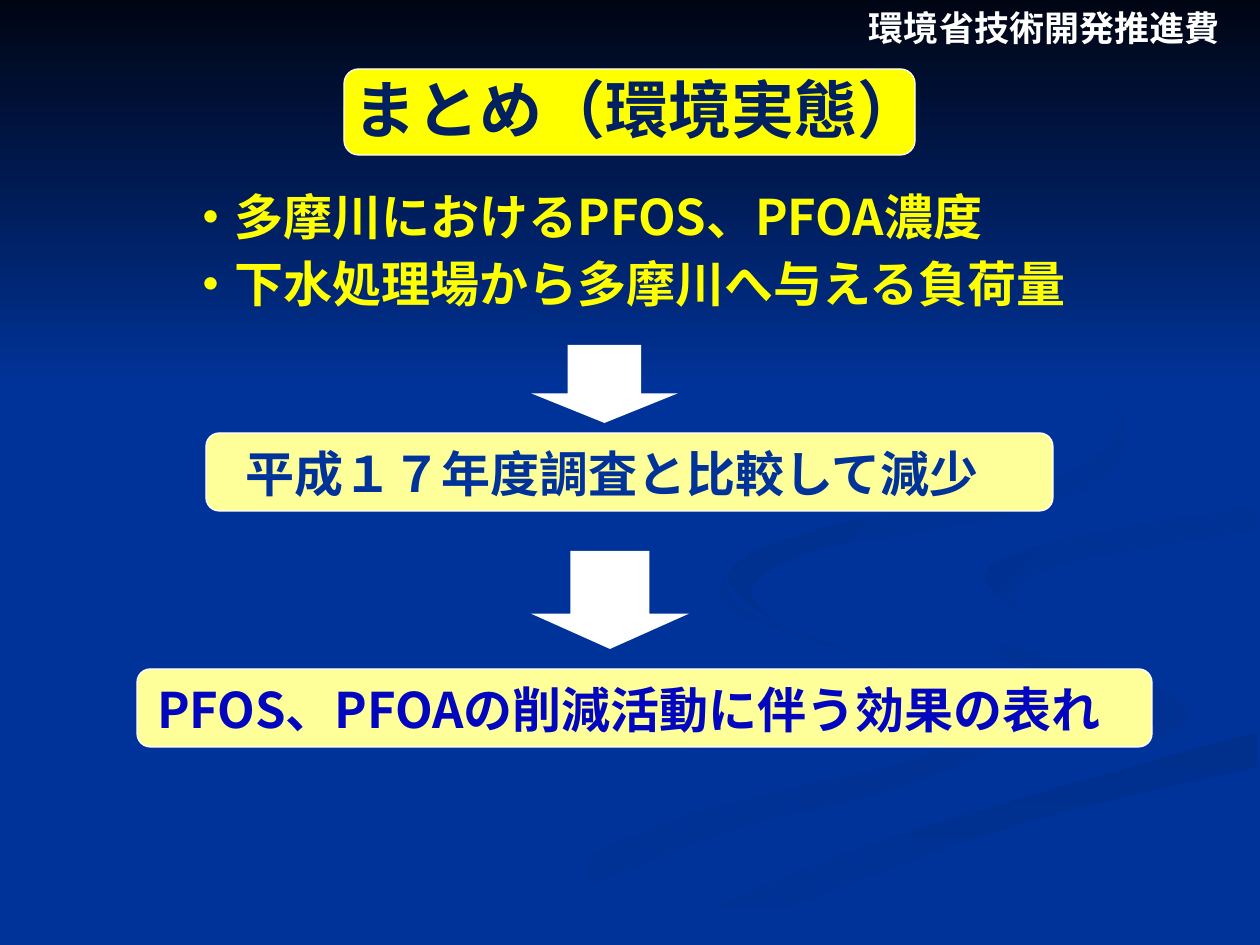
from pptx import Presentation
from pptx.dml.color import RGBColor
from pptx.enum.shapes import MSO_SHAPE
from pptx.enum.text import MSO_ANCHOR, MSO_AUTO_SIZE, PP_ALIGN
from pptx.oxml.ns import qn
from pptx.util import Pt
from lxml.etree import SubElement

PX = 7257.14  # EMU per px, at 126 px to the inch
THEME = {
    "font": "Noto Sans CJK JP",
    "background": "003399", "band_top": "000514",
    "ribbon_light": "003193", "ribbon_mid": "003091", "ribbon_dark": "002F8C",
    "white": "FFFFFF", "yellow": "FFFF00", "cream": "FFFF99",
    "title": "002060", "finding": "003399", "effect": "0206BE",
    "title_size": 36, "body_size": 28, "header_size": 20,
}


def place(shape, left, top, width, height):
    shape.left, shape.top, shape.width, shape.height = (
        round(value * PX) for value in (left, top, width, height))


def write(shape, text, size, color, anchor=MSO_ANCHOR.TOP, inset=0, wrap=True):
    frame = shape.text_frame
    frame.text = text
    frame.word_wrap = wrap
    frame.auto_size = MSO_AUTO_SIZE.NONE
    frame.vertical_anchor = anchor
    frame.margin_left = frame.margin_right = round(inset * PX)
    frame.margin_top = frame.margin_bottom = round(inset / 2 * PX)
    for paragraph in frame.paragraphs:
        paragraph.alignment = PP_ALIGN.LEFT
        paragraph.line_spacing = 1.0
        paragraph.space_before = Pt(0)
        font = paragraph.runs[0].font
        font.name, font.size, font.bold = THEME["font"], Pt(THEME[size]), True
        font.color.rgb = RGBColor.from_string(THEME[color])
        SubElement(font._element, qn("a:ea"), typeface=THEME["font"])


presentation = Presentation()
presentation.slide_width, presentation.slide_height = round(1260 * PX), round(945 * PX)
slide = presentation.slides.add_slide(presentation.slide_layouts[1])
slide.background.fill.solid()
slide.background.fill.fore_color.rgb = RGBColor.from_string(THEME["background"])

# Background ribbons and top band: start colour, end colour, angle, edges
low_edge = [(634, 944), (794, 873), (963, 815), (1257, 732)]
backdrop = [
    ("background", "ribbon_light", 0, [
        [(724, 578), (748, 611), (859, 654), (984, 697),
         (1007, 735), (908, 785), (711, 838), (455, 944)],
        [(378, 944), (679, 818), (916, 759), (988, 715),
         (960, 689), (856, 654), (740, 615), (718, 592)]]),
    ("background", "ribbon_light", 45, [
        [(912, 585), (939, 617), (1022, 649), (1140, 680), (1188, 718), (1126, 762)],
        [(1126, 762), (1157, 732), (1109, 692), (1004, 660), (924, 615), (912, 585)]]),
    ("ribbon_dark", "background", 90, [
        low_edge, [(1257, 767), (1034, 820), (818, 895), (719, 944)]]),
    ("background", "background", 0, [
        [(601, 944), (780, 862), (983, 799), (1188, 725), (1140, 680),
         (1023, 649), (914, 585), (1018, 526), (1259, 488)],
        [(1259, 507), (1052, 542), (984, 580), (1048, 627), (1259, 678)],
        low_edge[::-1]]),
    ("ribbon_mid", "background", 45, [
        [(1257, 507), (1131, 527), (1021, 551), (984, 580), (1041, 625)],
        [(1041, 625), (1014, 595), (1062, 564), (1257, 529)]]),
    ("ribbon_dark", "background", 45, [
        [(960, 294), (1062, 347), (1126, 433), (1077, 493),
         (931, 530), (818, 549), (751, 588), (784, 630)],
        [(784, 630), (728, 575), (818, 529), (1046, 481),
         (1120, 422), (1066, 352), (960, 294)]]),
    ("band_top", "background", 90, [[(0, 0), (0, 388)], [(1260, 388), (1260, 0)]]),
]
STEPS = 6
for start, end, angle, edges in backdrop:
    # Each edge is a Catmull-Rom curve through its points
    outline = []
    for edge in edges:
        padded = [edge[0], *edge, edge[-1]]
        for a, b, c, d in zip(padded, padded[1:], padded[2:], padded[3:]):
            for step in range(STEPS):
                t = step / STEPS
                outline.append(tuple(
                    q + t * (r - p) / 2 + t**2 * (2 * p - 5 * q + 4 * r - s) / 2
                    + t**3 * (3 * q - p - 3 * r + s) / 2
                    for p, q, r, s in zip(a, b, c, d)))
        outline.append(edge[-1])
    builder = slide.shapes.build_freeform(*outline[0], scale=PX)
    builder.add_line_segments(outline[1:], close=True)
    shape = builder.convert_to_shape()
    shape.shadow.inherit = False
    shape.line.fill.background()
    if start == end:
        shape.fill.solid()
        shape.fill.fore_color.rgb = RGBColor.from_string(THEME[start])
    else:
        shape.fill.gradient()
        shape.fill.gradient_angle = (360 - angle) % 360
        for stop, color in zip(shape.fill.gradient_stops, (start, end)):
            stop.color.rgb = RGBColor.from_string(THEME[color])

# Rounded boxes and down arrows: kind, place, fill, adjustments
BOX, ARROW = MSO_SHAPE.ROUNDED_RECTANGLE, MSO_SHAPE.DOWN_ARROW
for kind, bounds, color, adjustments in [
    (BOX, (344, 69, 571, 86), "yellow", [0.17]),
    (ARROW, (531, 345, 147, 78), "white", [0.5, 0.38]),
    (BOX, (206, 433, 847, 78), "cream", [0.17]),
    (ARROW, (531, 551, 158, 98), "white", [0.5, 0.36]),
    (BOX, (137, 669, 1015, 78), "cream", [0.17]),
]:
    shape = slide.shapes.add_shape(kind, 0, 0, 0, 0)
    place(shape, *bounds)
    for index, value in enumerate(adjustments):
        shape.adjustments[index] = value
    shape.shadow.inherit = False
    shape.fill.solid()
    shape.fill.fore_color.rgb = RGBColor.from_string(THEME[color])
    if kind == BOX:
        shape.line.color.rgb = RGBColor.from_string(THEME["white"])
        shape.line.width = Pt(0.75)
    else:
        shape.line.fill.background()

# Title and findings, brought in front of the boxes
title, body = slide.placeholders
for placeholder in (title, body):
    slide.shapes._spTree.append(placeholder._element)
place(title, 354, 69, 576, 78)
write(title, "まとめ（環境実態）", "title_size", "title", MSO_ANCHOR.MIDDLE)
place(body, 186, 186, 910, 140)
write(body, "・多摩川におけるPFOS、PFOA濃度\n・下水処理場から多摩川へ与える負荷量", "body_size", "yellow")
for paragraph in body.text_frame.paragraphs:
    paragraph.space_after = Pt(5)
    properties = paragraph._p.get_or_add_pPr()
    properties.set("marL", "0")
    properties.set("indent", "0")
    SubElement(properties, qn("a:buNone"))

# Conclusions and the header
for text, bounds, size, color, inset, wrap in [
    ("平成１７年度調査と比較して減少", (246, 444, 777, 59), "body_size", "finding", 0, True),
    ("PFOS、PFOAの削減活動に伴う効果の表れ", (157, 679, 1004, 59), "body_size", "effect", 0, True),
    ("環境省技術開発推進費", (857, 0, 379, 55), "header_size", "white", 12, False),
]:
    text_box = slide.shapes.add_textbox(0, 0, 0, 0)
    place(text_box, *bounds)
    write(text_box, text, size, color, inset=inset, wrap=wrap)

presentation.save("out.pptx")
